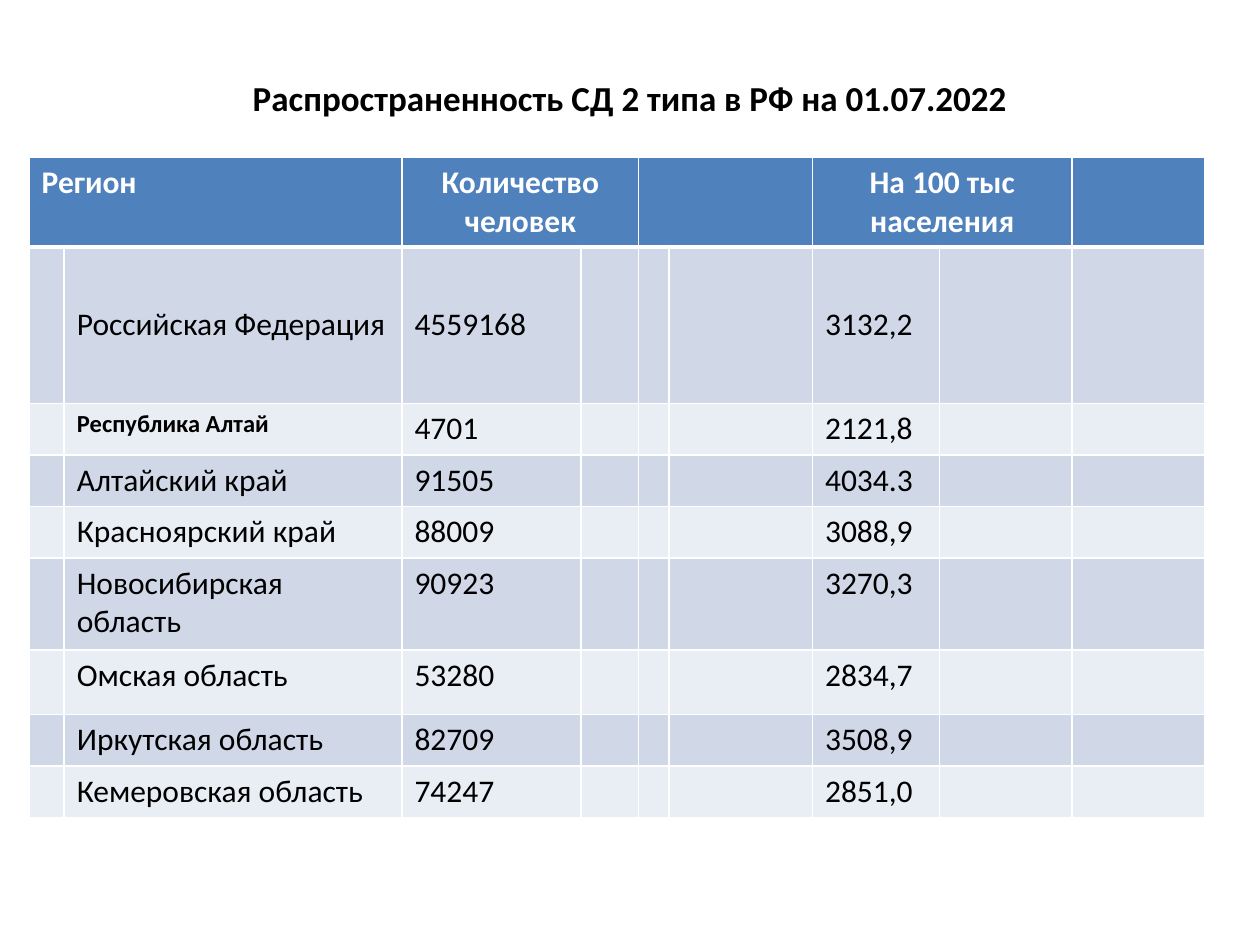
"""Build a slide with a table of type 2 diabetes prevalence by region."""
from dataclasses import dataclass

from lxml.etree import SubElement
from pptx import Presentation
from pptx.dml.color import RGBColor
from pptx.enum.text import MSO_ANCHOR, PP_ALIGN
from pptx.oxml.ns import qn
from pptx.util import Inches, Pt

WHITE = RGBColor(0xFF, 0xFF, 0xFF)
BLACK = RGBColor(0, 0, 0)
BLUE = RGBColor(0x4F, 0x81, 0xBD)
BANDS = (RGBColor(0xD0, 0xD8, 0xE8), RGBColor(0xE9, 0xED, 0xF4))
FONT = "Calibri"
WIDTHS = (0.28, 2.68, 1.42, 0.46, 0.23, 1.14, 1.01, 1.05, 1.05)
HEAD_HEIGHT = 0.7
HEADS = {0: "Регион", 2: "Количество человек", 4: "", 6: "На 100 тыс населения"}


@dataclass
class Region:
    name: str
    count: str
    rate: str
    height: float = 0.41
    size: int = 18
    bold: bool = False
    anchor: MSO_ANCHOR = MSO_ANCHOR.TOP


REGIONS = (
    Region("Российская Федерация", "4559168", "3132,2", height=1.24,
           anchor=MSO_ANCHOR.MIDDLE),
    Region("Республика Алтай", "4701", "2121,8", size=14, bold=True),
    Region("Алтайский край", "91505", "4034.3"),
    Region("Красноярский край", "88009", "3088,9"),
    Region("Новосибирская область", "90923", "3270,3", height=0.73),
    Region("Омская область", "53280", "2834,7", height=0.51),
    Region("Иркутская область", "82709", "3508,9"),
    Region("Кемеровская область", "74247", "2851,0"),
)


def write(frame, text: str, size: int, color: RGBColor, bold: bool,
          align: PP_ALIGN = PP_ALIGN.LEFT) -> None:
    """Set the text of a frame and its one format."""
    frame.text = text
    line = frame.paragraphs[0]
    line.alignment = align
    font = line.font
    font.name, font.size, font.bold = FONT, Pt(size), bold
    font.color.rgb = color


def paint(cell, fill: RGBColor, top: int = 1, bottom: int = 1) -> None:
    """Give a cell white borders and a solid fill."""
    props = cell._tc.get_or_add_tcPr()
    for side, width in zip("LRTB", (1, 1, top, bottom)):
        line = SubElement(props, qn(f"a:ln{side}"), w=str(Pt(width)))
        solid = SubElement(line, qn("a:solidFill"))
        SubElement(solid, qn("a:srgbClr"), val=str(WHITE))
    cell.fill.solid()
    cell.fill.fore_color.rgb = fill


def add_title(slide) -> None:
    """Place and format the slide title."""
    title = slide.shapes.title
    title.left, title.top = Inches(0.5), Inches(0.3)
    title.width, title.height = Inches(9), Inches(0.95)
    frame = title.text_frame
    frame.vertical_anchor = MSO_ANCHOR.MIDDLE
    write(frame, "Распространенность СД 2 типа в РФ на 01.07.2022",
          20, BLACK, True, PP_ALIGN.CENTER)


def add_grid(slide) -> None:
    """Draw the table of regions."""
    heights = [HEAD_HEIGHT] + [region.height for region in REGIONS]
    table = slide.shapes.add_table(
        len(heights), len(WIDTHS), Inches(0.23), Inches(1.25),
        Inches(sum(WIDTHS)), Inches(sum(heights))).table
    for column, width in zip(table.columns, WIDTHS):
        column.width = Inches(width)
    for row, height in zip(table.rows, heights):
        row.height = Inches(height)

    for cell in table.rows[0].cells:
        paint(cell, BLUE, bottom=3)
    for col, text in HEADS.items():
        cell = table.cell(0, col)
        cell.merge(table.cell(0, col + 1))
        align = PP_ALIGN.CENTER if col else PP_ALIGN.LEFT
        write(cell.text_frame, text, 18, WHITE, True, align)

    for row, region in enumerate(REGIONS, 1):
        for cell in table.rows[row].cells:
            paint(cell, BANDS[(row - 1) % 2], top=3 if row == 1 else 1)
            cell.vertical_anchor = region.anchor
        write(table.cell(row, 1).text_frame, region.name,
              region.size, BLACK, region.bold)
        for col, text in ((2, region.count), (6, region.rate)):
            write(table.cell(row, col).text_frame, text, 18, BLACK, False)


def main() -> None:
    """Build and save the deck."""
    deck = Presentation()
    deck.slide_width, deck.slide_height = Inches(10), Inches(7.5)
    slide = deck.slides.add_slide(deck.slide_layouts[5])
    add_title(slide)
    add_grid(slide)
    deck.save("out.pptx")


if __name__ == "__main__":
    main()
